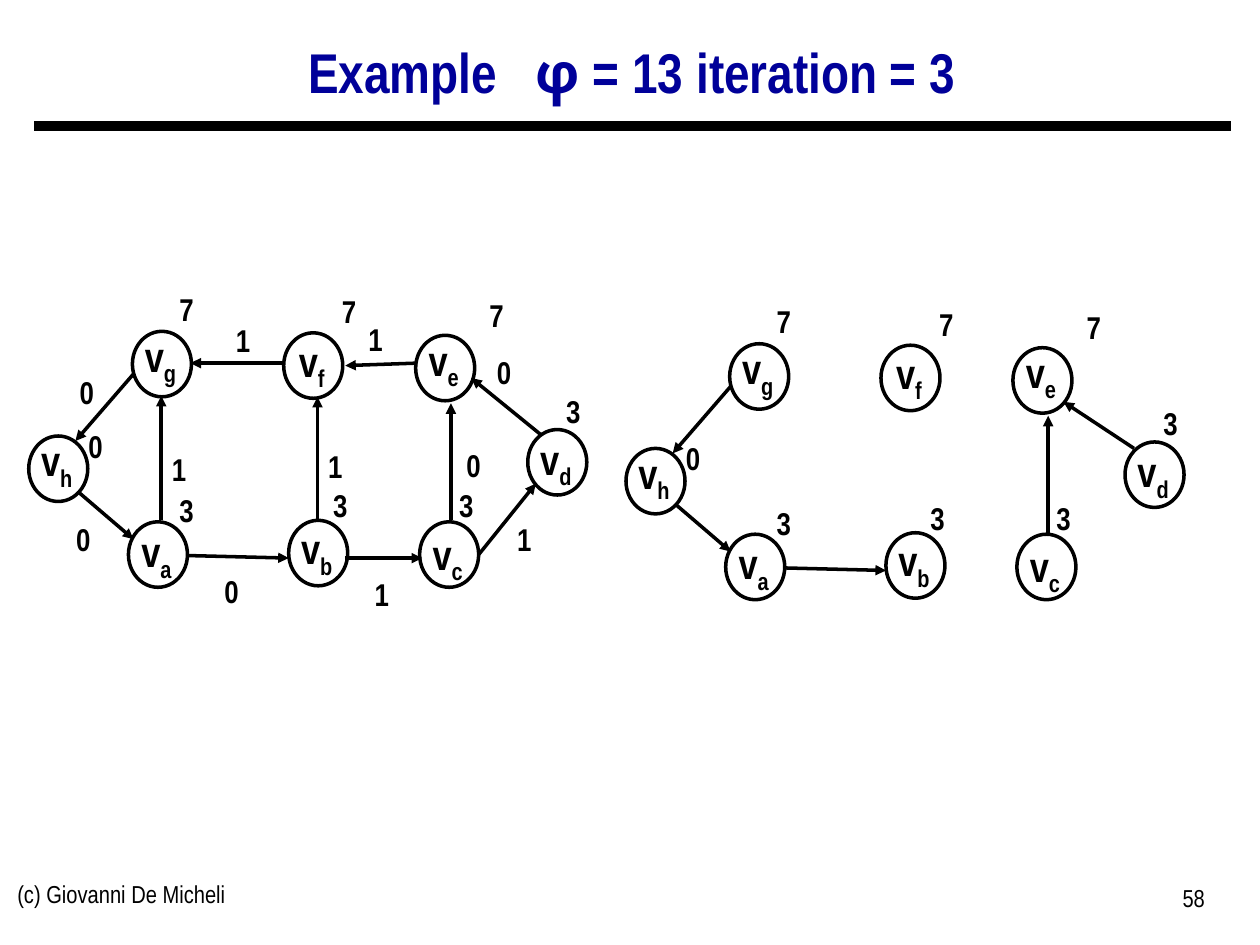
import dataclasses

import pptx
import pptx.dml.color
import pptx.enum.shapes
import pptx.enum.text
import pptx.oxml.ns
import pptx.util
from lxml import etree
from pptx.util import Cm

ALIGN = pptx.enum.text.PP_ALIGN
ANCHOR = pptx.enum.text.MSO_ANCHOR


@dataclasses.dataclass(frozen=True)
class Theme:
    font: str = "Arial Narrow"
    greek_font: str = "Noto Sans"
    ink: str = "000000"
    title_ink: str = "000099"
    title_size: float = 32
    node_size: float = 24
    number_size: float = 18
    footer_size: float = 14
    rule_width: float = 6
    line_width: float = 2


THEME = Theme()

# Lengths below are in centimetres
NODE_WIDTH, NODE_HEIGHT = 1.19, 1.32
LABEL_WIDTH, LABEL_HEIGHT = 3.07, 1.27
LABEL_SHIFT = -0.97
NUMBER_WIDTH, NUMBER_HEIGHT = 1.32, 1.02
SECOND_GRAPH = (12.04, 0.25)

# Vertex: circle left and top, label rise, time and its left and top
VERTICES = {
    "a": (2.59, 10.52, 0.05, "3", 3.10, 9.78),
    "b": (5.82, 10.49, 0.08, "3", 6.20, 9.68),
    "c": (8.46, 10.52, 0, "3", 8.74, 9.68),
    "d": (10.64, 8.66, 0.05, "3", 10.90, 7.77),
    "e": (8.38, 6.76, 0.15, "7", 9.35, 5.84),
    "f": (5.72, 6.71, 0.08, "7", 6.38, 5.77),
    "g": (2.67, 6.68, 0.15, "7", 3.10, 5.72),
    "h": (0.58, 8.79, 0.15, "0", 1.27, 8.48),
}

# Edge: start, end
EDGES = {
    "ab": (3.78, 11.20, 5.82, 11.25),
    "bc": (6.96, 11.25, 8.51, 11.25),
    "cd": (9.65, 11.18, 10.80, 9.75),
    "de": (10.90, 8.76, 9.50, 7.62),
    "ef": (8.41, 7.32, 6.96, 7.37),
    "fg": (5.69, 7.32, 3.84, 7.32),
    "gh": (2.69, 7.54, 1.52, 8.89),
    "ha": (1.57, 9.91, 2.69, 10.87),
    "ag": (3.25, 10.49, 3.25, 7.98),
    "bf": (6.40, 10.49, 6.40, 8.00),
    "ce": (9.09, 10.49, 9.09, 8.13),
}

# Edge weight: text, left, top
WEIGHTS = {
    "ab": ("0", 4.01, 11.40),
    "bc": ("1", 7.04, 11.46),
    "cd": ("1", 9.91, 10.36),
    "de": ("0", 9.50, 6.99),
    "ef": ("1", 6.91, 6.32),
    "fg": ("1", 4.24, 6.35),
    "gh": ("0", 1.09, 7.39),
    "ha": ("0", 1.02, 10.36),
    "ag": ("1", 2.95, 8.94),
    "bf": ("1", 6.10, 8.89),
    "ce": ("0", 8.89, 8.86),
}

# Edges kept in the second graph
KEPT_EDGES = {name: EDGES[name] for name in ("ab", "ce", "gh", "ha")}
KEPT_EDGES["de"] = (10.82, 8.79, 9.40, 7.85)


def colour(value):
    return pptx.dml.color.RGBColor.from_string(value)


def add_run(paragraph, text, *, size, font=THEME.font, ink=THEME.ink,
            bold=False, baseline=None, spacing=None):
    """Add formatted text; baseline in percent, spacing in points."""
    run = paragraph.add_run()
    run.text = text
    run.font.name = font
    run.font.size = pptx.util.Pt(size)
    run.font.bold = bold
    run.font.color.rgb = colour(ink)
    properties = run.font._element
    if baseline is not None:
        properties.set("baseline", str(baseline * 1000))
    if spacing is not None:
        properties.set("spc", str(round(spacing * 100)))


def add_text_box(slide, left, top, width, height, align=ALIGN.CENTER):
    """Add an empty text box and return its paragraph."""
    box = slide.shapes.add_textbox(Cm(left), Cm(top), Cm(width), Cm(height))
    box.text_frame.word_wrap = True
    paragraph = box.text_frame.paragraphs[0]
    paragraph.alignment = align
    return paragraph


def add_number(slide, text, left, top):
    paragraph = add_text_box(slide, left, top, NUMBER_WIDTH, NUMBER_HEIGHT)
    add_run(paragraph, text, size=THEME.number_size, bold=True)


def add_vertex(slide, name, left, top, label_rise):
    circle = slide.shapes.add_shape(
        pptx.enum.shapes.MSO_SHAPE.FLOWCHART_CONNECTOR,
        Cm(left), Cm(top), Cm(NODE_WIDTH), Cm(NODE_HEIGHT))
    circle.shadow.inherit = False
    circle.fill.background()
    circle.line.color.rgb = colour(THEME.ink)
    circle.line.width = pptx.util.Pt(THEME.line_width)

    paragraph = add_text_box(slide, left + LABEL_SHIFT, top - label_rise,
                             LABEL_WIDTH, LABEL_HEIGHT)
    add_run(paragraph, "v", size=THEME.node_size, bold=True)
    add_run(paragraph, name, size=THEME.node_size, bold=True, baseline=-25)


def add_line(slide, start_x, start_y, end_x, end_y, width, arrow=False):
    line = slide.shapes.add_connector(
        pptx.enum.shapes.MSO_CONNECTOR.STRAIGHT,
        Cm(start_x), Cm(start_y), Cm(end_x), Cm(end_y))
    line.line.color.rgb = colour(THEME.ink)
    line.line.width = pptx.util.Pt(width)
    qualified = pptx.oxml.ns.qn
    if arrow:
        etree.SubElement(line.line._get_or_add_ln(), qualified("a:tailEnd"),
                         type="triangle")
    etree.SubElement(line._element.spPr, qualified("a:effectLst"))


def add_graph(slide, edges, weights, shift=(0, 0)):
    """Draw all vertices with their times, then edges and weights."""
    right, down = shift
    for name, (left, top, rise, time, time_left, time_top) in VERTICES.items():
        add_number(slide, time, time_left + right, time_top + down)
        add_vertex(slide, name, left + right, top + down, rise)
    for start_x, start_y, end_x, end_y in edges.values():
        add_line(slide, start_x + right, start_y + down, end_x + right,
                 end_y + down, THEME.line_width, arrow=True)
    for text, left, top in weights.values():
        add_number(slide, text, left + right, top + down)


def set_title(slide):
    title = slide.shapes.title
    title.left, title.top = Cm(0.66), Cm(0.56)
    title.width, title.height = Cm(24.16), Cm(1.9)
    title.text_frame.vertical_anchor = ANCHOR.MIDDLE
    paragraph = title.text_frame.paragraphs[0]
    paragraph.alignment = ALIGN.CENTER
    paragraph.line_spacing = 0.9
    style = {"size": THEME.title_size, "ink": THEME.title_ink, "bold": True}
    add_run(paragraph, "Example", **style)
    add_run(paragraph, " ", spacing=14.6, **style)
    add_run(paragraph, "φ", font=THEME.greek_font, **style)
    add_run(paragraph, " = 13 iteration = 3", **style)


def main():
    presentation = pptx.Presentation()
    presentation.slide_width, presentation.slide_height = Cm(25.4), Cm(19.05)
    slide = presentation.slides.add_slide(presentation.slide_layouts[5])

    # Title and rule
    set_title(slide)
    add_line(slide, 0.69, 2.54, 24.82, 2.54, THEME.rule_width)

    # Weighted graph, then the graph of kept edges
    add_graph(slide, EDGES, WEIGHTS)
    add_graph(slide, KEPT_EDGES, {}, SECOND_GRAPH)

    # Footer
    credit = add_text_box(slide, 0.1, 17.6, 8.05, 1.32, ALIGN.LEFT)
    add_run(credit, "(c) Giovanni De Micheli", size=THEME.footer_size)
    number = add_text_box(slide, 18.62, 17.68, 5.92, 1.32, ALIGN.RIGHT)
    add_run(number, "58", size=THEME.footer_size)

    presentation.save("out.pptx")


if __name__ == "__main__":
    main()
